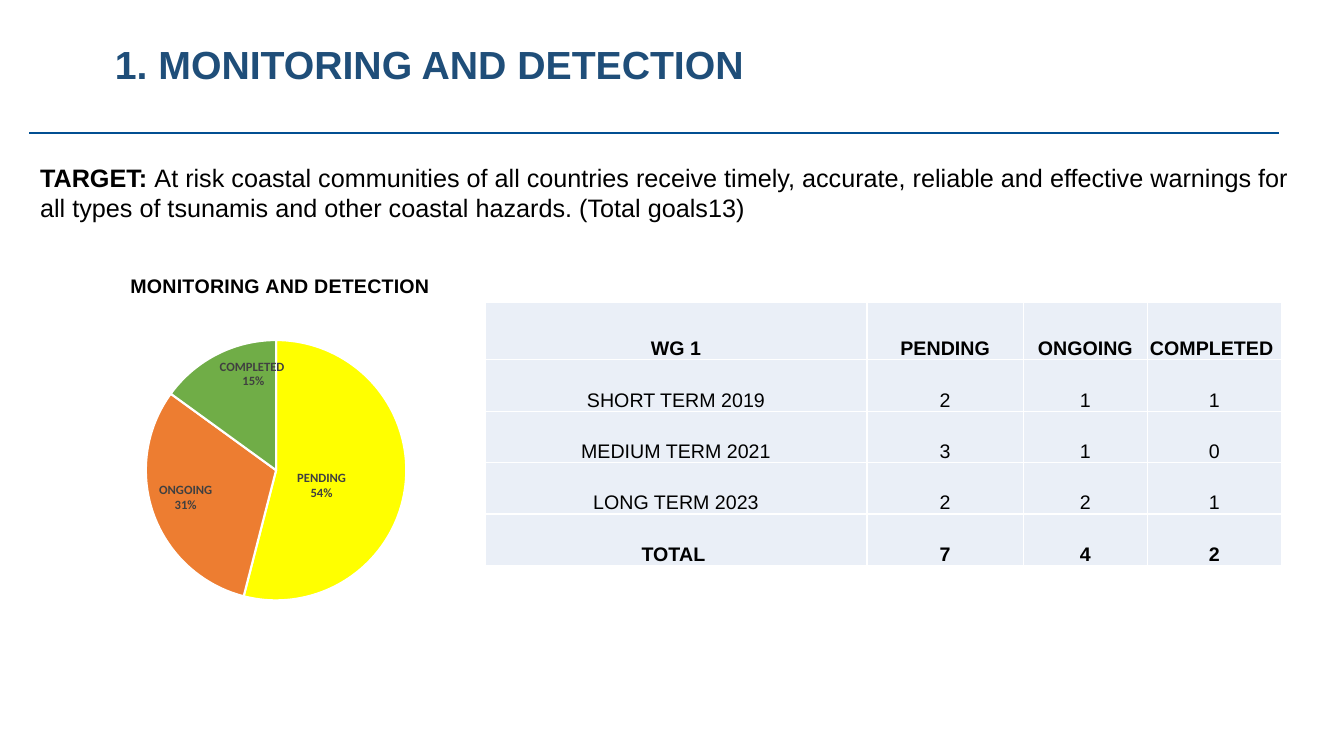
from lxml import etree
from pptx import Presentation
from pptx.chart.data import CategoryChartData
from pptx.dml.color import RGBColor
from pptx.enum.chart import XL_CHART_TYPE, XL_LABEL_POSITION
from pptx.enum.shapes import MSO_CONNECTOR
from pptx.enum.text import MSO_ANCHOR, PP_ALIGN
from pptx.oxml import parse_xml
from pptx.oxml.ns import nsdecls, qn
from pptx.util import Inches, Pt

PIE = XL_CHART_TYPE.PIE
LABEL_CENTER = XL_LABEL_POSITION.CENTER
LABEL_INSIDE_END = XL_LABEL_POSITION.INSIDE_END
STRAIGHT = MSO_CONNECTOR.STRAIGHT
TOP, BOTTOM = MSO_ANCHOR.TOP, MSO_ANCHOR.BOTTOM
LEFT, CENTER = PP_ALIGN.LEFT, PP_ALIGN.CENTER

BLACK = RGBColor(0x00, 0x00, 0x00)
WHITE = RGBColor(0xFF, 0xFF, 0xFF)
NAVY = RGBColor(0x1F, 0x4E, 0x79)
RULE_BLUE = RGBColor(0x01, 0x4F, 0x92)
LABEL_GRAY = RGBColor(0x40, 0x40, 0x40)
CELL_BLUE = RGBColor(0xEA, 0xEF, 0xF7)
YELLOW = RGBColor(0xFF, 0xFF, 0x00)
ORANGE = RGBColor(0xED, 0x7D, 0x31)
GREEN = RGBColor(0x70, 0xAD, 0x47)


class SlideBuilder:
    text_font = "Arial"
    label_font = "Calibri"

    def __init__(self, page):
        self.page = page

    def style(self, font, size, color=BLACK, bold=False, name=text_font):
        font.name = name
        font.size = Pt(size)
        font.bold = bold
        font.color.rgb = color

    def area(self, left, top, width, height):
        return Inches(left), Inches(top), Inches(width), Inches(height)

    def title(self, text, area):
        box = self.page.shapes.title
        box.left, box.top, box.width, box.height = self.area(*area)
        frame = box.text_frame
        frame.text = text
        frame.word_wrap = True
        frame.vertical_anchor = TOP
        para = frame.paragraphs[0]
        para.alignment = LEFT
        para.line_spacing = 0.9
        self.style(para.font, 28, NAVY, True)

    def statement(self, lead, text, area):
        frame = self.page.shapes.add_textbox(*self.area(*area)).text_frame
        frame.word_wrap = True
        para = frame.paragraphs[0]
        para.space_after = Pt(6)
        self.style(para.font, 18)
        span = para.add_run()
        span.text = lead
        span.font.bold = True
        para.add_run().text = text

    def rule(self, left, right, top):
        line = self.page.shapes.add_connector(
            STRAIGHT, Inches(left), Inches(top), Inches(right), Inches(top))
        line.line.color.rgb = RULE_BLUE
        line.line.width = Pt(1.75)
        etree.SubElement(line._element.spPr, qn("a:effectLst"))

    def layout(self, **sizes):
        parts = "".join(f'<c:{key} val="{value}"/>' for key, value in sizes.items())
        return parse_xml(f'<c:layout {nsdecls("c")}><c:manualLayout>{parts}'
                         '</c:manualLayout></c:layout>')

    def show_category_and_percent(self, labels):
        for tag, value in (("showVal", "0"), ("showCatName", "1"), ("showPercent", "1")):
            labels.find(qn(f"c:{tag}")).set("val", value)
        separator = etree.Element(qn("c:separator"))
        separator.text = "\n"
        labels.find(qn("c:showBubbleSize")).addnext(separator)

    def pie(self, title, shares, colors, area):
        data = CategoryChartData()
        data.categories = list(shares)
        data.add_series(title, list(shares.values()))
        chart = self.page.shapes.add_chart(PIE, *self.area(*area), data).chart
        chart.has_legend = False
        self.style(chart.font, 10, bold=True, name=self.label_font)

        chart.has_title = True
        frame = chart.chart_title.text_frame
        frame.text = title
        self.style(frame.paragraphs[0].font, 14, bold=True)
        chart.chart_title.include_in_layout = False
        heading = chart.chart_title._element
        for old in heading.findall(qn("c:layout")):
            heading.remove(old)
        heading.find(qn("c:tx")).addnext(
            self.layout(xMode="edge", yMode="edge", x=0.26, y=0.05))

        plot_area = chart._chartSpace.chart.plotArea
        for old in plot_area.findall(qn("c:layout")):
            plot_area.remove(old)
        plot_area.insert(0, self.layout(layoutTarget="inner", xMode="edge", yMode="edge",
                                        x=0.29, y=0.24, w=0.41, h=0.72))

        plot = chart.plots[0]
        plot.vary_by_categories = True
        series = plot.series[0]
        for index, color in enumerate(colors):
            form = series.points[index].format
            form.fill.solid()
            form.fill.fore_color.rgb = color
            form.line.color.rgb = WHITE
            form.line.width = Pt(1.5)

        labels = series.data_labels
        labels.position = LABEL_INSIDE_END
        self.style(labels.font, 9, LABEL_GRAY, True, self.label_font)
        first_label = series.points[0].data_label
        first_label.position = LABEL_CENTER
        self.style(first_label.font, 9, LABEL_GRAY, True, self.label_font)
        first = labels._element.find(qn("c:dLbl"))
        first.find(qn("c:idx")).addnext(self.layout(x=-0.03, y=0.02))
        for element in (first, labels._element):
            self.show_category_and_percent(element)

    def cell_borders(self, cell):
        properties = cell._tc.get_or_add_tcPr()
        for index, side in enumerate(("lnL", "lnR", "lnT", "lnB")):
            properties.insert(index, parse_xml(
                f'<a:{side} {nsdecls("a")} w="{Pt(1)}"><a:solidFill>'
                f'<a:srgbClr val="{WHITE}"/></a:solidFill></a:{side}>'))

    def table(self, rows, widths, heights, left, top):
        table = self.page.shapes.add_table(
            len(rows), len(widths),
            *self.area(left, top, sum(widths), sum(heights))).table
        table.horz_banding = False
        for column, width in zip(table.columns, widths):
            column.width = Inches(width)
        for row, height in zip(table.rows, heights):
            row.height = Inches(height)
        for row_index, values in enumerate(rows):
            for column_index, value in enumerate(values):
                cell = table.cell(row_index, column_index)
                cell.text = value
                cell.vertical_anchor = BOTTOM
                cell.margin_left = cell.margin_right = cell.margin_top = Inches(0.01)
                cell.margin_bottom = 0
                cell.fill.solid()
                cell.fill.fore_color.rgb = CELL_BLUE
                self.cell_borders(cell)
                para = cell.text_frame.paragraphs[0]
                para.alignment = CENTER
                self.style(para.font, 14, bold=row_index in (0, len(rows) - 1))


def main():
    deck = Presentation()
    deck.slide_width, deck.slide_height = Inches(13.33), Inches(7.5)
    builder = SlideBuilder(deck.slides.add_slide(deck.slide_layouts[5]))
    builder.title("1. MONITORING AND DETECTION", (1.04, 0.4, 7.89, 0.72))
    builder.statement(
        "TARGET: ",
        "At risk coastal communities of all countries receive timely, accurate, reliable "
        "and effective warnings for all types of tsunamis and other coastal hazards. "
        "(Total goals13)",
        (0.3, 1.56, 12.73, 0.71))
    builder.pie("MONITORING AND DETECTION",
                {"PENDING": 54, "ONGOING": 31, "COMPLETED ": 15},
                (YELLOW, ORANGE, GREEN), (-0.38, 2.5, 6.3, 3.61))
    builder.table(
        [("WG 1", "PENDING", "ONGOING", "COMPLETED "),
         ("SHORT TERM 2019", "2", "1", "1"),
         ("MEDIUM TERM 2021", "3", "1", "0"),
         ("LONG TERM 2023", "2", "2", "1"),
         ("TOTAL ", "7", "4", "2")],
        (3.79, 1.55, 1.23, 1.33), [0.57] + [0.51] * 4, 4.81, 3)
    builder.rule(0.29, 12.69, 1.32)
    deck.save("out.pptx")


if __name__ == "__main__":
    main()
